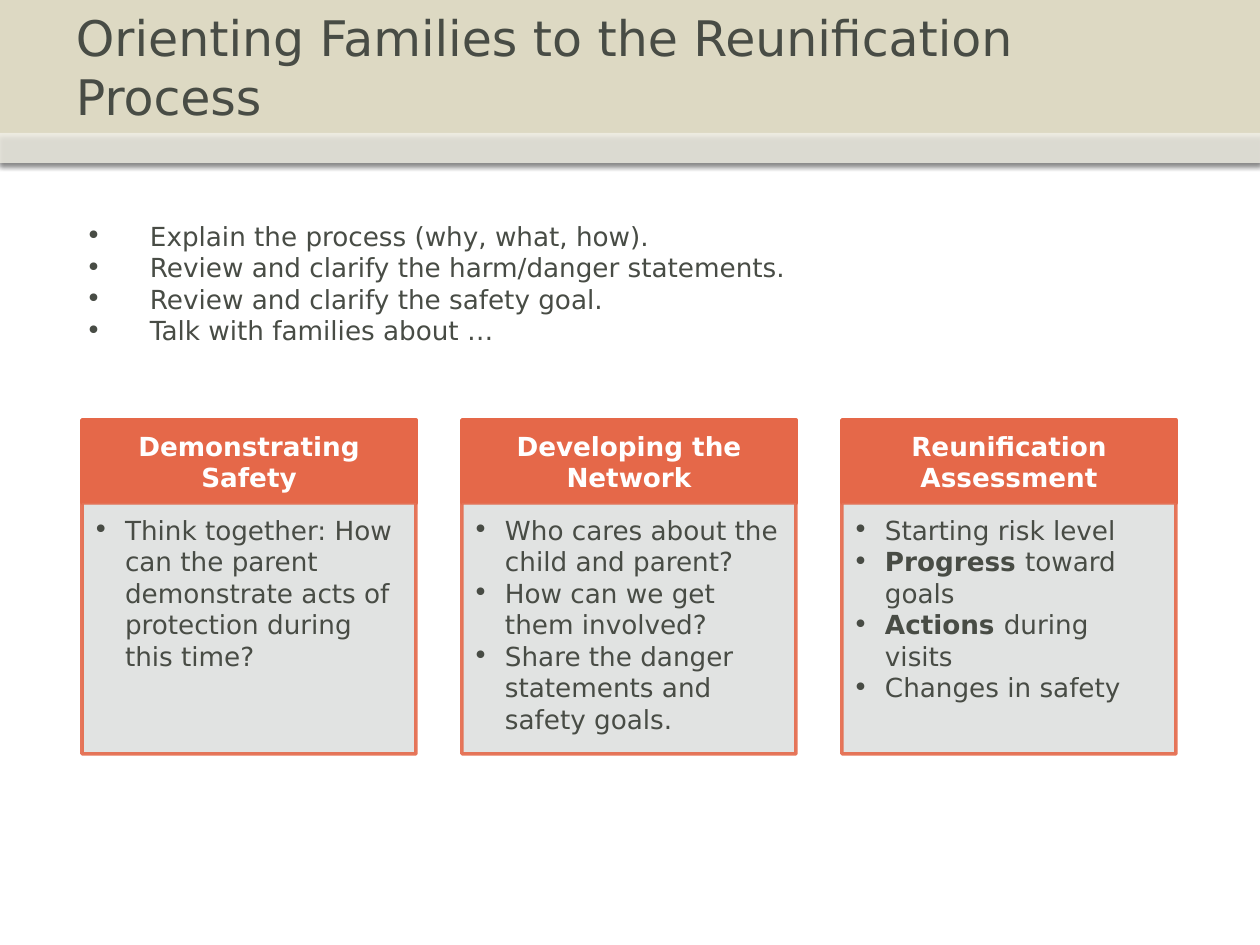
from dataclasses import dataclass

from lxml import etree
from pptx import Presentation
from pptx.dml.color import RGBColor
from pptx.enum.shapes import MSO_SHAPE
from pptx.enum.text import MSO_ANCHOR, PP_ALIGN
from pptx.oxml.ns import qn
from pptx.util import Pt

RECT = MSO_SHAPE.RECTANGLE
TOP, MIDDLE = MSO_ANCHOR.TOP, MSO_ANCHOR.MIDDLE
LEFT, CENTER = PP_ALIGN.LEFT, PP_ALIGN.CENTER
PX = 914400 // 126  # EMU per px


@dataclass(frozen=True)
class Theme:
    font: str = "DejaVu Sans"
    title_size: int = 28
    body_size: int = 15
    leading: float = 1.2
    ink: str = "484C45"
    white: str = "FFFFFF"
    sand: str = "DDD9C3"
    accent: str = "E56849"
    panel: str = "DEE1DF"


THEME = Theme()

TITLE = "Orienting Families to the Reunification Process"
STEPS = [
    "Explain the process (why, what, how).",
    "Review and clarify the harm/danger statements.",
    "Review and clarify the safety goal.",
    "Talk with families about …",
]
# A paragraph is a string or a list of (text, bold) runs
CARDS = [
    ("Demonstrating Safety", [
        "Think together: How can the parent demonstrate acts of protection during this time?",
    ]),
    ("Developing the Network", [
        "Who cares about the child and parent?",
        "How can we get them involved?",
        "Share the danger statements and safety goals.",
    ]),
    ("Reunification Assessment", [
        "Starting risk level",
        [("Progress ", True), ("toward goals", False)],
        [("Actions ", True), ("during visits", False)],
        "Changes in safety",
    ]),
]


def px(*lengths):
    return [n * PX for n in lengths]


def set_alpha(color_format_parent, percent):
    color = color_format_parent.find(".//" + qn("a:srgbClr"))
    etree.SubElement(color, qn("a:alpha"), val=str(percent * 1000))


def add_rect(slide, box, fill, alpha=100, line=None):
    sp = slide.shapes.add_shape(RECT, *px(*box))
    sp.shadow.inherit = False
    sp.fill.solid()
    sp.fill.fore_color.rgb = RGBColor.from_string(fill)
    if line:
        sp.line.color.rgb = RGBColor.from_string(line)
        sp.line.width = Pt(2)
    else:
        sp.line.fill.background()
    if alpha < 100:
        props = sp._element.spPr
        set_alpha(props.find(qn("a:solidFill")), alpha)
        if line:
            set_alpha(props.find(qn("a:ln")), alpha)
    return sp


def add_shadow(sp):
    effects = sp._element.spPr.find(qn("a:effectLst"))
    shadow = etree.SubElement(effects, qn("a:outerShdw"), blurRad=str(Pt(3.1)),
                              dist=str(Pt(1.8)), dir="5400000", rotWithShape="0")
    color = etree.SubElement(shadow, qn("a:srgbClr"), val="000000")
    etree.SubElement(color, qn("a:alpha"), val="35000")


def write(sp, paragraphs, color, size=THEME.body_size, bold=False, align=LEFT,
          anchor=TOP, insets=(13, 6, 13, 6), indent=0):
    tf = sp.text_frame
    tf.word_wrap = True
    tf.vertical_anchor = anchor
    tf.margin_left, tf.margin_top, tf.margin_right, tf.margin_bottom = px(*insets)
    for i, runs in enumerate(paragraphs):
        p = tf.add_paragraph() if i else tf.paragraphs[0]
        p.alignment = align
        p.line_spacing = Pt(size * THEME.leading)
        if indent:
            pPr = p._p.get_or_add_pPr()
            pPr.set("marL", str(indent * PX))
            pPr.set("indent", str(-indent * PX))
            etree.SubElement(pPr, qn("a:buFont"), typeface=THEME.font)
            etree.SubElement(pPr, qn("a:buChar"), char="•")
        for text, strong in [(runs, bold)] if isinstance(runs, str) else runs:
            r = p.add_run()
            r.text = text
            r.font.name = THEME.font
            r.font.size = Pt(size)
            r.font.bold = strong
            r.font.color.rgb = RGBColor.from_string(color)


def add_banner(slide, box):
    x, y, w, h = box
    strip = 30
    # Sand band with a translucent strip along its lower edge
    add_shadow(add_rect(slide, box, THEME.sand))
    add_shadow(add_rect(slide, (x, y + h - strip, w, strip), THEME.white, alpha=53))
    # Title
    tb = slide.shapes.add_textbox(*px(x + 63, y, w - 126, h - strip))
    write(tb, [TITLE], THEME.ink, THEME.title_size, anchor=MIDDLE)


def add_steps(slide, box):
    tb = slide.shapes.add_textbox(*px(*box))
    write(tb, STEPS, THEME.ink, indent=64)


def add_card(slide, box, heading, points):
    x, y, w, h = box
    head = 83
    # Heading
    sp = add_rect(slide, (x, y, w, head), THEME.accent, line=THEME.accent)
    write(sp, [heading], THEME.white, bold=True, align=CENTER, anchor=MIDDLE,
          insets=(15, 9, 15, 9))
    # Points
    sp = add_rect(slide, (x, y + head, w, h - head), THEME.panel, alpha=90,
                  line=THEME.accent)
    write(sp, points, THEME.ink, insets=(11, 11, 15, 16), indent=32)


def add_cards(slide, box):
    x, y, w, h = box
    gap = 46
    card_w = (w - gap * (len(CARDS) - 1)) // len(CARDS)
    for i, (heading, points) in enumerate(CARDS):
        add_card(slide, (x + i * (card_w + gap), y, card_w, h), heading, points)


def main():
    prs = Presentation()
    prs.slide_width, prs.slide_height = px(1260, 945)
    slide = prs.slides.add_slide(prs.slide_layouts[6])
    add_banner(slide, (0, 0, 1260, 163))
    add_steps(slide, (73, 214, 998, 150))
    add_cards(slide, (82, 420, 1094, 334))
    prs.save("out.pptx")


if __name__ == "__main__":
    main()
